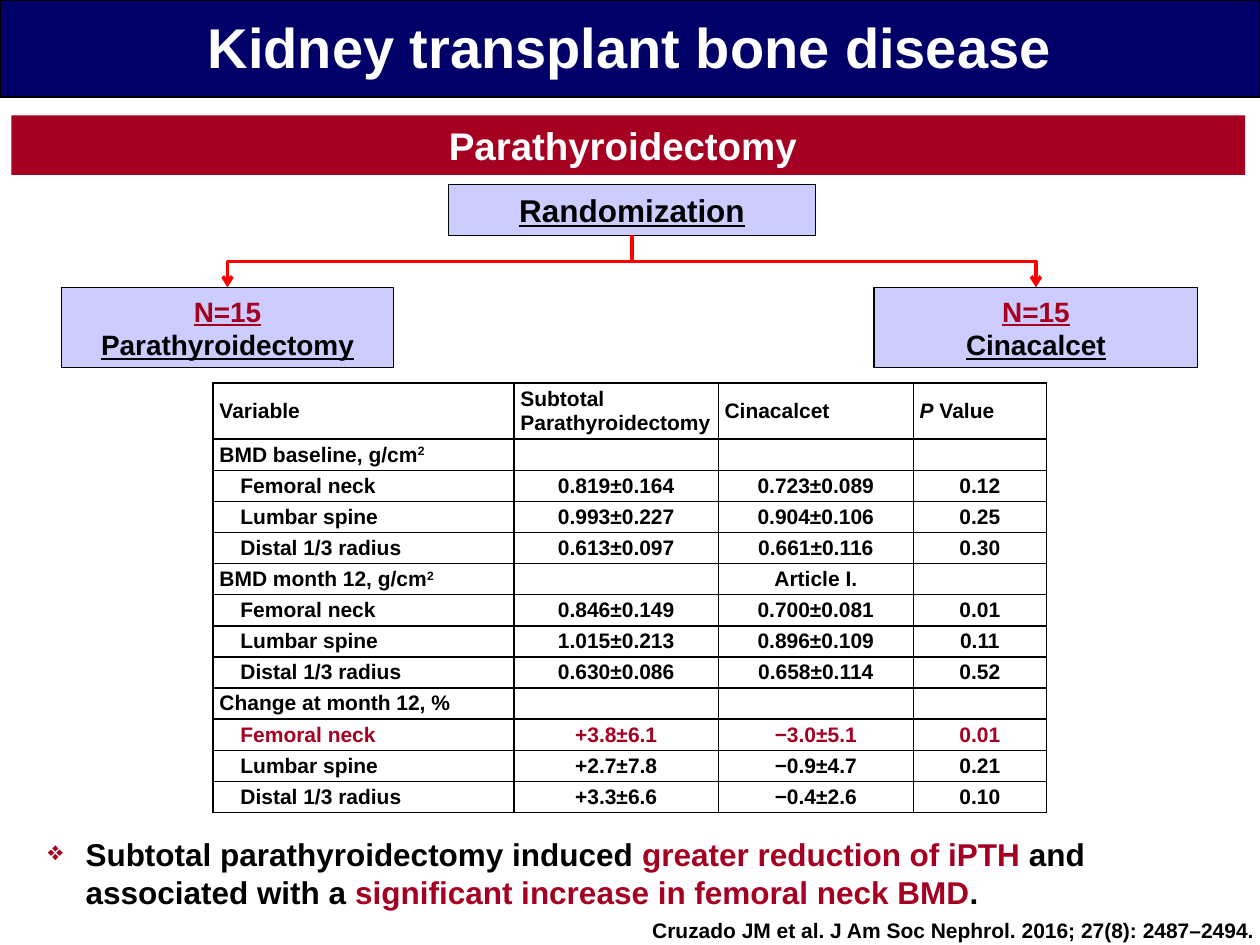
from dataclasses import dataclass

from lxml import etree
from pptx import Presentation
from pptx import util as u
from pptx.dml.color import RGBColor
from pptx.enum import shapes, text
from pptx.oxml import ns

Pt = u.Pt
LEFT, CENTER = text.PP_ALIGN.LEFT, text.PP_ALIGN.CENTER
MIDDLE = text.MSO_ANCHOR.MIDDLE


@dataclass(frozen=True)
class Theme:
    font: str = "Arial"
    navy: str = "000068"
    crimson: str = "A50021"
    lavender: str = "CCCCFF"
    red: str = "FF0000"
    black: str = "000000"
    white: str = "FFFFFF"
    title: int = 32
    band: int = 22
    body: int = 18
    group: int = 16
    small: int = 12


def add_xml(parent, tag, **attributes):
    element = etree.SubElement(parent, ns.qn(tag))
    for name, value in attributes.items():
        element.set(name, str(value))
    return element


class SlideBuilder:
    def __init__(self, slide, theme):
        self.slide = slide
        self.theme = theme

    def fill_paragraph(self, paragraph, runs, size, color, align=LEFT, underline=None):
        """Fill a paragraph with (text, color, style) runs; a plain string is one run."""
        paragraph.alignment = align
        for content, run_color, style in [(runs, color, "")] if isinstance(runs, str) else runs:
            run = paragraph.add_run()
            run.text = content
            run.font.color.rgb = RGBColor.from_string(run_color)
            if style == "italic":
                run.font.italic = True
            elif style == "super":
                run.font._element.set("baseline", "30000")
        for font in [paragraph.font] + [run.font for run in paragraph.runs]:
            font.name, font.size = self.theme.font, Pt(size)
            font.bold, font.underline = True, underline

    def text_box(self, box, runs, size, color, align=LEFT):
        shape = self.slide.shapes.add_textbox(*map(Pt, box))
        shape.text_frame.word_wrap = True
        paragraph = shape.text_frame.paragraphs[0]
        self.fill_paragraph(paragraph, runs, size, color, align)
        return paragraph

    def bullet(self, box, runs, size):
        paragraph = self.text_box(box, runs, size, self.theme.black)
        paragraph.space_before = Pt(5.8)
        properties = paragraph._p.get_or_add_pPr()
        properties.set("marL", str(Pt(21.6)))
        properties.set("indent", str(-Pt(21.6)))
        # Bullet marks stand after spacing and before the default run style
        marks = etree.Element("marks")
        add_xml(add_xml(marks, "a:buClr"), "a:srgbClr", val=self.theme.crimson)
        add_xml(marks, "a:buSzPct", val=85000)
        add_xml(marks, "a:buChar", char="❖")
        default_style = properties.find(ns.qn("a:defRPr"))
        for mark in list(marks):
            default_style.addprevious(mark)

    def box(self, box, fill, lines=(), size=None, outlined=True, underline=None):
        shape = self.slide.shapes.add_shape(shapes.MSO_SHAPE.RECTANGLE, *map(Pt, box))
        shape.shadow.inherit = False
        shape.fill.solid()
        shape.fill.fore_color.rgb = RGBColor.from_string(fill)
        if outlined:
            shape.line.color.rgb = RGBColor.from_string(self.theme.black)
            shape.line.width = Pt(0.75)
        else:
            shape.line.fill.background()
        frame = shape.text_frame
        frame.word_wrap, frame.vertical_anchor = True, MIDDLE
        for index, (content, color) in enumerate(lines):
            paragraph = frame.add_paragraph() if index else frame.paragraphs[0]
            self.fill_paragraph(paragraph, content, size, color, CENTER, underline)

    def branch(self, start_x, start_y, end_x, end_y):
        """Elbow arrow that leaves downwards: a sideways elbow turned a quarter."""
        middle_x, middle_y = (start_x + end_x) / 2, (start_y + end_y) / 2
        half_run, half_drop = abs(end_x - start_x) / 2, (end_y - start_y) / 2
        side = 1 if end_x > start_x else -1
        connector = self.slide.shapes.add_connector(
            shapes.MSO_CONNECTOR.ELBOW,
            Pt(middle_x + side * half_drop), Pt(middle_y - half_run),
            Pt(middle_x - side * half_drop), Pt(middle_y + half_run))
        connector.line.color.rgb = RGBColor.from_string(self.theme.red)
        connector.line.width = Pt(2)
        properties = connector._element.spPr
        properties.find(ns.qn("a:xfrm")).set("rot", str((270 if side > 0 else 90) * 60000))
        add_xml(connector.line._get_or_add_ln(), "a:tailEnd", type="arrow")
        add_xml(properties, "a:effectLst")

    def cell(self, cell, runs, color, align, indent):
        cell.vertical_anchor = MIDDLE
        cell.margin_left, cell.margin_right = Pt(3.6 + indent), Pt(3.6)
        cell.margin_top = cell.margin_bottom = Pt(1.44)
        paragraph = cell.text_frame.paragraphs[0]
        if runs:
            self.fill_paragraph(paragraph, runs, self.theme.small, color, align)
        else:
            add_xml(paragraph._p, "a:endParaRPr", sz=self.theme.small * 100)
        properties = cell._tc.get_or_add_tcPr()
        for edge in ("a:lnL", "a:lnR", "a:lnT", "a:lnB"):
            border = add_xml(properties, edge, w=Pt(1))
            add_xml(add_xml(border, "a:solidFill"), "a:srgbClr", val=self.theme.black)
        cell.fill.background()

    def table(self, left, top, widths, heights, rows):
        """Rows are (cells, color, indent of the first cell)."""
        frame = self.slide.shapes.add_table(
            len(rows), len(widths), Pt(left), Pt(top), Pt(sum(widths)), Pt(sum(heights)))
        table = frame.table
        table.first_row = table.horz_banding = False
        for column, width in zip(table.columns, widths):
            column.width = Pt(width)
        for row, height in zip(table.rows, heights):
            row.height = Pt(height)
        for r, (cells, color, indent) in enumerate(rows):
            for c, runs in enumerate(cells):
                align = CENTER if r and c else LEFT
                self.cell(table.cell(r, c), runs, color, align, 0 if c else indent)


def main():
    theme = Theme()
    black, crimson = theme.black, theme.crimson
    presentation = Presentation()
    presentation.slide_width, presentation.slide_height = Pt(720), Pt(540)
    slide = presentation.slides.add_slide(presentation.slide_layouts[6])
    builder = SlideBuilder(slide, theme)

    # Title and subtitle bands
    builder.box((0, 0, 720, 55.5), theme.navy)
    builder.text_box((0, 3.6, 720, 46), "Kidney transplant bone disease",
                     theme.title, theme.white, CENTER)
    builder.box((6.5, 66, 705, 34), crimson, [("Parathyroidectomy ", theme.white)],
                theme.band, outlined=False)

    # Randomization into two arms
    start_x, start_y, arm_y = 361.2, 134.5, 164.2
    builder.box((256.3, 105.5, 209.8, 29), theme.lavender, [("Randomization", black)],
                theme.body, underline=True)
    for name, left, width in (("Cinacalcet", 499.5, 185), ("Parathyroidectomy", 35, 190)):
        builder.box((left, arm_y, width, 46), theme.lavender,
                    [("N=15", crimson), (name, black)], theme.group, underline=True)
        builder.branch(start_x, start_y, left + width / 2, arm_y)

    # Bone mineral density table
    def with_square(label):
        return [(label, black, ""), ("2", black, "super")]

    sites = ("Femoral neck", "Lumbar spine", "Distal 1/3 radius")
    sections = [
        ([with_square("BMD baseline, g/cm"), "", "", ""],
         [("0.819±0.164", "0.723±0.089", "0.12"),
          ("0.993±0.227", "0.904±0.106", "0.25"),
          ("0.613±0.097", "0.661±0.116", "0.30")]),
        ([with_square("BMD month 12, g/cm"), "", "Article I.", ""],
         [("0.846±0.149", "0.700±0.081", "0.01"),
          ("1.015±0.213", "0.896±0.109", "0.11"),
          ("0.630±0.086", "0.658±0.114", "0.52")]),
        (["Change at month 12, %", "", "", ""],
         [("+3.8±6.1", "−3.0±5.1", "0.01"),
          ("+2.7±7.8", "−0.9±4.7", "0.21"),
          ("+3.3±6.6", "−0.4±2.6", "0.10")]),
    ]
    p_value = [("P", black, "italic"), (" Value", black, "")]
    rows = [(["Variable", "Subtotal Parathyroidectomy", "Cinacalcet", p_value], black, 0)]
    for heading, values in sections:
        rows.append((heading, black, 0))
        rows += [([site, *numbers], black, 12) for site, numbers in zip(sites, values)]
    highlighted = 10
    rows[highlighted] = (rows[highlighted][0], crimson, 12)
    builder.table(121.8, 218.8, [172, 116.7, 111.5, 76], [32.2] + [17.8] * 12, rows)

    # Conclusion and citation
    builder.bullet((20.2, 473.8, 680.4, 51), [
        ("Subtotal parathyroidectomy induced ", black, ""),
        ("greater reduction of iPTH ", crimson, ""),
        ("and associated with a ", black, ""),
        ("significant increase in femoral neck BMD", crimson, ""),
        (".", black, "")], theme.body)
    builder.text_box((365.6, 520.6, 374.4, 21.6),
                     "Cruzado JM et al. J Am Soc Nephrol. 2016; 27(8): 2487–2494.",
                     theme.small, black)

    presentation.save("out.pptx")


if __name__ == "__main__":
    main()
